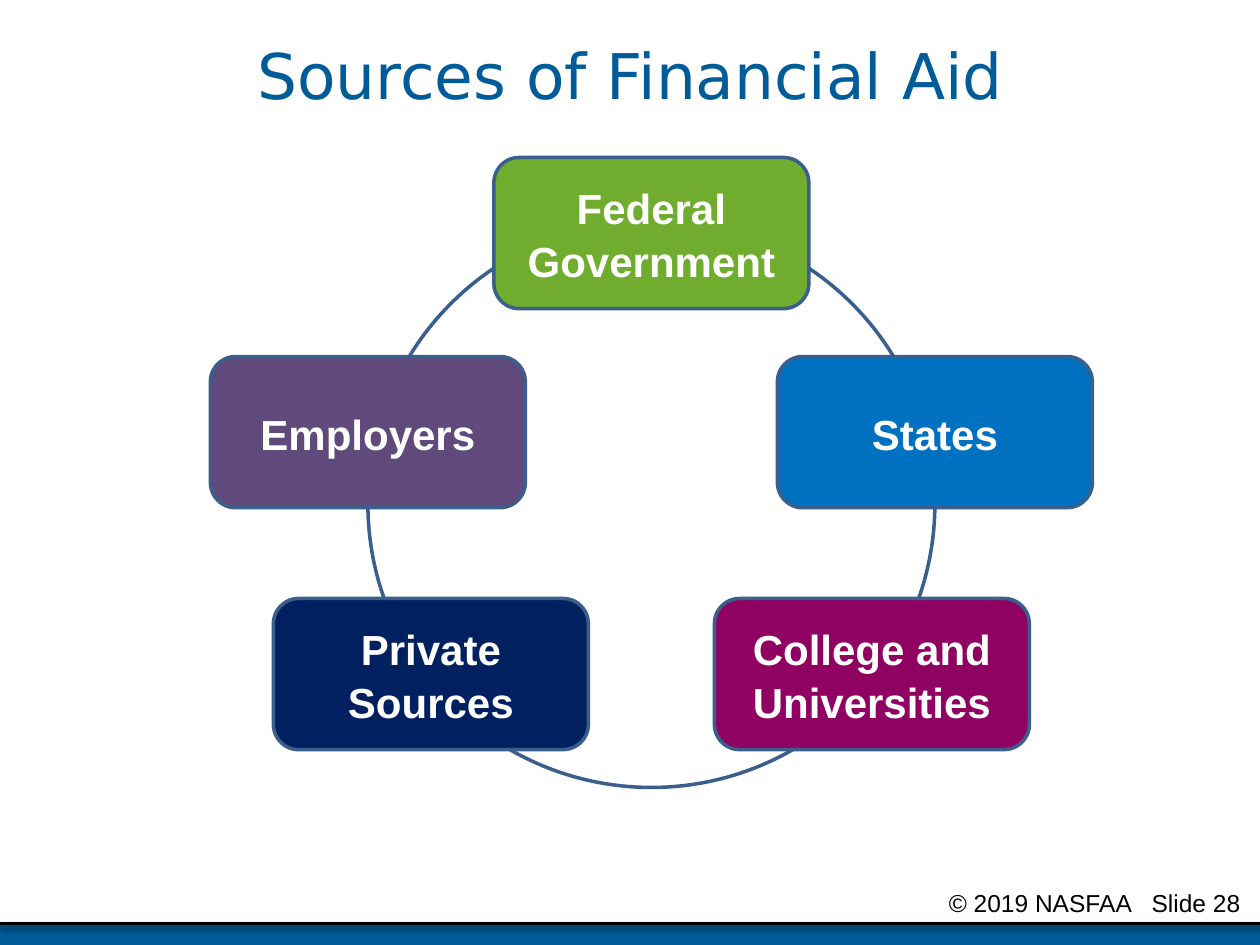
from lxml.etree import SubElement
from pptx import Presentation
from pptx.dml.color import RGBColor
from pptx.enum.shapes import MSO_CONNECTOR as Connector, MSO_SHAPE as Shape
from pptx.enum.text import MSO_ANCHOR as Anchor, PP_ALIGN as Align
from pptx.oxml.ns import qn
from pptx.util import Inches, Pt

BLACK = RGBColor(0x00, 0x00, 0x00)
WHITE = RGBColor(0xFF, 0xFF, 0xFF)
BLUE = RGBColor(0x00, 0x5B, 0x99)
OUTLINE = RGBColor(0x3A, 0x5F, 0x8C)

RING_X, RING_Y, RING_SIZE = 5.17, 4, 4.5
BOX_WIDTH, BOX_HEIGHT = 2.5, 1.2

# Text, offset from the ring's centre line, top, fill
SOURCES = [
    ("Federal Government", 0, 1.25, RGBColor(0x70, 0xAC, 0x2E)),
    ("States", 2.25, 2.83, RGBColor(0x00, 0x70, 0xC0)),
    ("College and Universities", 1.75, 4.75, RGBColor(0x90, 0x02, 0x61)),
    ("Private Sources", -1.75, 4.75, RGBColor(0x00, 0x20, 0x60)),
    ("Employers", -2.25, 2.83, RGBColor(0x60, 0x4A, 0x7B)),
]


def write_text(shape, text, size, color, font="Arial", bold=False,
               align=Align.CENTER, anchor=Anchor.MIDDLE, spacing=None, tab=None):
    """Fill a shape with one paragraph; tab is a left tab stop in inches."""
    frame = shape.text_frame
    frame.word_wrap = True
    frame.vertical_anchor = anchor
    paragraph = frame.paragraphs[0]
    paragraph.alignment = align
    if spacing:
        paragraph.line_spacing = spacing
    if tab:
        tab_list = SubElement(paragraph._p.get_or_add_pPr(), qn("a:tabLst"))
        SubElement(tab_list, qn("a:tab"), pos=str(Inches(tab)), algn="l")
    run = paragraph.add_run()
    run.text = text
    run.font.name = font
    run.font.size = Pt(size)
    run.font.bold = bold
    run.font.color.rgb = color


def add_preset(slide, preset, left, top, width, height, fill=None, line=None):
    shape = slide.shapes.add_shape(
        preset, Inches(left), Inches(top), Inches(width), Inches(height))
    shape.shadow.inherit = False
    if fill is None:
        shape.fill.background()
    else:
        shape.fill.solid()
        shape.fill.fore_color.rgb = fill
    if line is None:
        shape.line.fill.background()
    else:
        shape.line.color.rgb = line
        shape.line.width = Pt(2)
    return shape


def add_shadowed_line(slide, left, right, y):
    line = slide.shapes.add_connector(
        Connector.STRAIGHT, Inches(left), Inches(y), Inches(right), Inches(y))
    line.line.color.rgb = BLACK
    line.line.width = Pt(2)
    effects = SubElement(line._element.spPr, qn("a:effectLst"))
    shadow = SubElement(effects, qn("a:outerShdw"), blurRad=str(Pt(3.1)),
                        dist=str(Pt(1.6)), dir="5400000", rotWithShape="0")
    color = SubElement(shadow, qn("a:srgbClr"), val=str(BLACK))
    SubElement(color, qn("a:alpha"), val="38000")


def add_footer(slide):
    add_preset(slide, Shape.RECTANGLE, 0, 7.33, 10, 0.2, fill=BLUE)
    add_shadowed_line(slide, 0, 10, 7.33)
    footer = slide.shapes.add_textbox(
        Inches(6.25), Inches(7), Inches(3.75), Inches(0.25))
    footer.text_frame.margin_left = Inches(1.28)
    write_text(footer, "© 2019 NASFAA\tSlide 28", 14, BLACK,
               align=Align.LEFT, anchor=Anchor.TOP, tab=1.61)


def add_title(slide, text):
    title = slide.shapes.title
    title.left, title.top = Inches(0.17), Inches(0)
    title.width, title.height = Inches(9.67), Inches(1.25)
    write_text(title, text, 36, BLUE, font="DejaVu Sans", spacing=0.9)


def add_source_ring(slide):
    add_preset(slide, Shape.OVAL, RING_X - RING_SIZE / 2, RING_Y - RING_SIZE / 2,
               RING_SIZE, RING_SIZE, line=OUTLINE)
    for text, offset, top, fill in SOURCES:
        box = add_preset(slide, Shape.ROUNDED_RECTANGLE,
                         RING_X + offset - BOX_WIDTH / 2, top,
                         BOX_WIDTH, BOX_HEIGHT, fill=fill, line=OUTLINE)
        write_text(box, text, 24, WHITE, bold=True, spacing=1.05)


def main():
    presentation = Presentation()
    presentation.slide_width = Inches(10)
    presentation.slide_height = Inches(7.5)
    slide = presentation.slides.add_slide(presentation.slide_layouts[5])
    add_footer(slide)
    add_title(slide, "Sources of Financial Aid")
    add_source_ring(slide)
    presentation.save("out.pptx")


if __name__ == "__main__":
    main()
